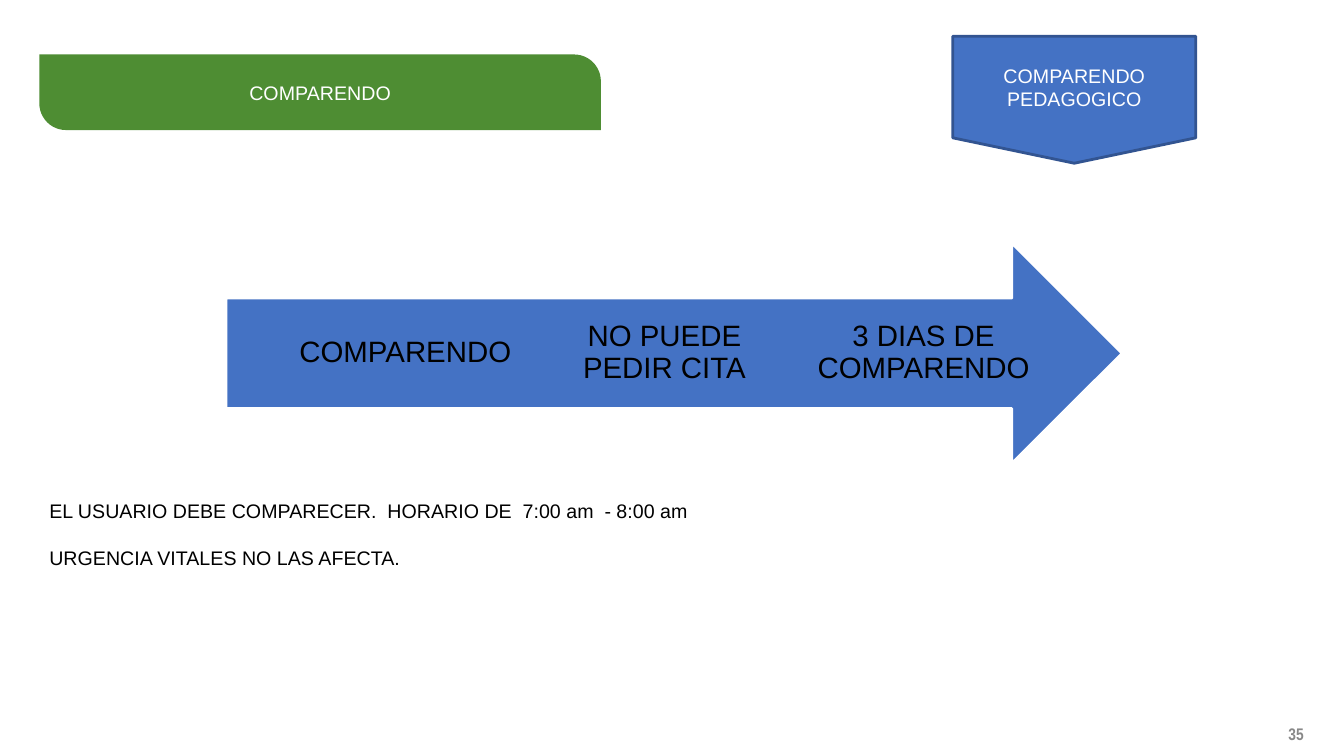
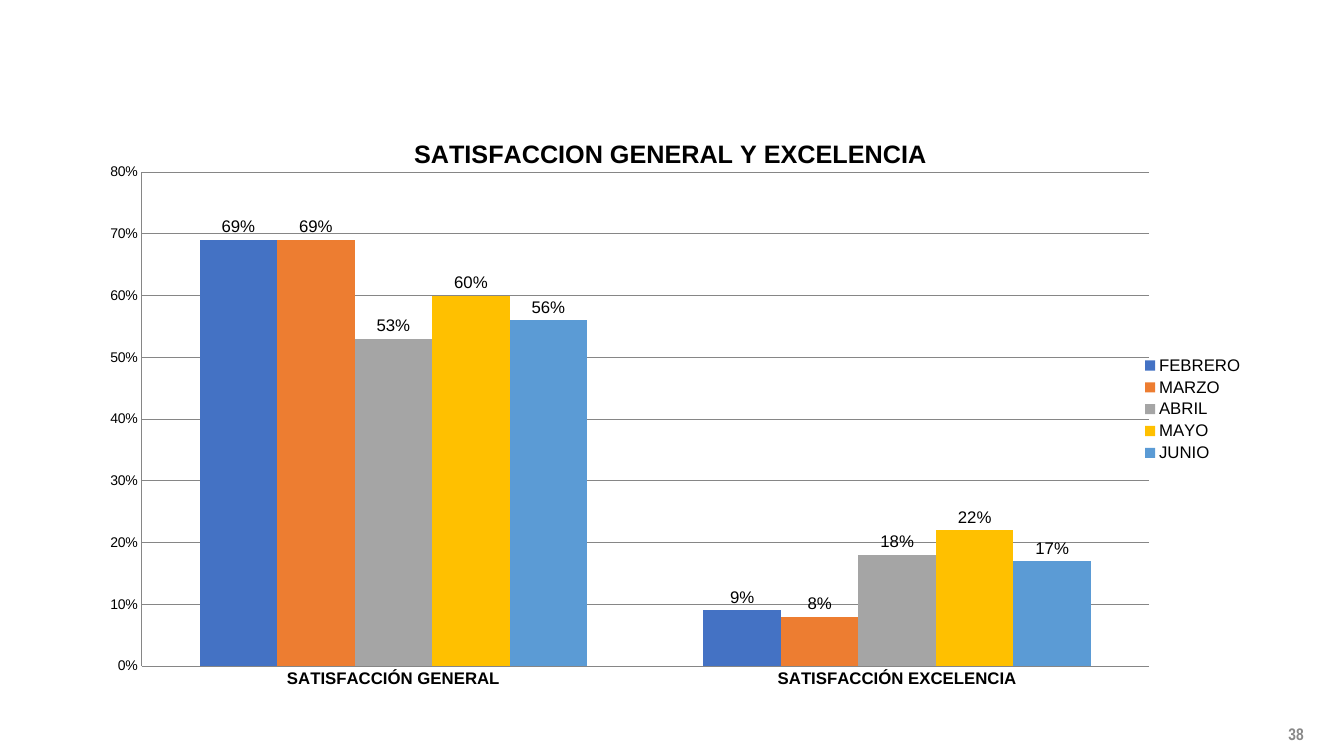
from lxml import etree
from pptx import Presentation
from pptx.chart.data import CategoryChartData
from pptx.dml.color import RGBColor
from pptx.enum.chart import XL_CHART_TYPE, XL_LABEL_POSITION, XL_LEGEND_POSITION, XL_TICK_MARK
from pptx.enum.shapes import MSO_SHAPE
from pptx.enum.text import MSO_ANCHOR, PP_ALIGN
from pptx.oxml.ns import qn
from pptx.util import Inches, Pt

COLUMNS = XL_CHART_TYPE.COLUMN_CLUSTERED
LABELS_ABOVE = XL_LABEL_POSITION.OUTSIDE_END
LEGEND_RIGHT = XL_LEGEND_POSITION.RIGHT
NO_TICKS = XL_TICK_MARK.NONE
BAND = MSO_SHAPE.ROUND_2_DIAG_RECTANGLE
PENTAGON = MSO_SHAPE.FLOWCHART_OFFPAGE_CONNECTOR
ARROW = MSO_SHAPE.RIGHT_ARROW
MIDDLE, TOP = MSO_ANCHOR.MIDDLE, MSO_ANCHOR.TOP
CENTER, LEFT = PP_ALIGN.CENTER, PP_ALIGN.LEFT

# Shared look
COLORS = {
    name: RGBColor.from_string(value)
    for name, value in {
        "blue": "4472C4", "navy": "325491", "green": "4E8D33", "orange": "ED7D31",
        "silver": "A5A5A5", "gold": "FFC000", "sky": "5B9BD5", "grid": "868686",
        "number": "888888", "black": "000000", "white": "FFFFFF",
    }.items()
}
FONT, NUMBER_FONT = "Arial", "Arial Narrow"
TITLE_ONLY, BLANK = 5, 6


def write(box, lines, size, color, align=CENTER, anchor=MIDDLE, font=FONT,
          bold=False, spacing=1.0, gap=0):
    frame = box.text_frame
    frame.word_wrap = True
    frame.vertical_anchor = anchor
    for index, line in enumerate(lines):
        para = frame.add_paragraph() if index else frame.paragraphs[0]
        para.alignment = align
        para.line_spacing = spacing
        para.space_before = Pt(gap if index else 0)
        span = para.add_run()
        span.text = line
        span.font.name = font
        span.font.size = Pt(size)
        span.font.bold = bold
        span.font.color.rgb = COLORS[color]
    return frame


def add_block(page, kind, place, fill, line=None):
    block = page.shapes.add_shape(kind, *map(Inches, place))
    block.shadow.inherit = False
    block.fill.solid()
    block.fill.fore_color.rgb = COLORS[fill]
    if line:
        block.line.color.rgb = COLORS[line]
        block.line.width = Pt(2)
    else:
        block.line.fill.background()
    return block


deck = Presentation()
deck.slide_width, deck.slide_height = Inches(13.33), Inches(7.5)
process_page = deck.slides.add_slide(deck.slide_layouts[TITLE_ONLY])
chart_page = deck.slides.add_slide(deck.slide_layouts[BLANK])

# Page numbers
for page, number in ((process_page, "35"), (chart_page, "38")):
    number_box = page.shapes.add_textbox(*map(Inches, (12.47, 7.08, 0.77, 0.4)))
    write(number_box, [number], 12, "number", font=NUMBER_FONT, bold=True)

# Slide 1: title on its green band
band_place = (0.39, 0.54, 5.57, 0.75)
band = add_block(process_page, BAND, band_place, "green")
band.adjustments[0], band.adjustments[1] = 0, 0.354
title = process_page.shapes.title
title.left, title.top, title.width, title.height = map(Inches, band_place)
write(title, ["COMPARENDO"], 14, "white")
# Bring the title in front of the band
band.element.addnext(title.element)

# Slide 1: pentagon tag
tag = add_block(process_page, PENTAGON, (9.45, 0.36, 2.41, 1.26), "blue", "navy")
write(tag, ["COMPARENDO PEDAGOGICO"], 14, "white")

# Slide 1: arrow with its steps
add_block(process_page, ARROW, (2.24, 2.41, 8.89, 2.19), "blue", "white")
steps = ["COMPARENDO", "NO PUEDE PEDIR CITA", "3 DIAS DE COMPARENDO"]
for index, step in enumerate(steps):
    step_place = (2.95 + 2.57 * index, 2.96, 2.14, 1.09)
    step_box = process_page.shapes.add_textbox(*map(Inches, step_place))
    frame = write(step_box, [step], 21, "black", spacing=0.9)
    frame.margin_left = frame.margin_right = 0
    frame.margin_top = frame.margin_bottom = Inches(0.23)

# Slide 1: remarks
remarks = [
    "EL USUARIO DEBE COMPARECER.  HORARIO DE  7:00 am  - 8:00 am",
    "URGENCIA VITALES NO LAS AFECTA.",
]
remark_box = process_page.shapes.add_textbox(*map(Inches, (0.39, 4.9, 8.31, 1.75)))
write(remark_box, remarks, 14, "black", LEFT, TOP, gap=17)

# Slide 2: chart data
months = [
    ("FEBRERO", (0.69, 0.09), "blue"),
    ("MARZO", (0.69, 0.08), "orange"),
    ("ABRIL", (0.53, 0.18), "silver"),
    ("MAYO", (0.6, 0.22), "gold"),
    ("JUNIO", (0.56, 0.17), "sky"),
]
data = CategoryChartData(number_format="0%")
data.categories = ["SATISFACCIÓN GENERAL", "SATISFACCIÓN EXCELENCIA"]
for month, values, _ in months:
    data.add_series(month, values)
chart_place = map(Inches, (0.86, 1.15, 11.58, 5.82))
chart = chart_page.shapes.add_chart(COLUMNS, *chart_place, data).chart
chart.font.name = FONT
chart.font.size = Pt(10)
chart.font.color.rgb = COLORS["black"]

# Slide 2: chart title and legend
write(chart.chart_title, ["SATISFACCION GENERAL Y EXCELENCIA"], 18, "black", bold=True)
chart.chart_title.include_in_layout = False
chart.has_legend = True
chart.legend.position = LEGEND_RIGHT
chart.legend.include_in_layout = False
chart.legend.font.size = Pt(12)

# Slide 2: columns
plot = chart.plots[0]
plot.gap_width, plot.overlap = 150, 0
plot.vary_by_categories = False
for series, (_, _, color) in zip(plot.series, months):
    series.format.fill.solid()
    series.format.fill.fore_color.rgb = COLORS[color]
    labels = series.data_labels
    labels.show_value = True
    labels.number_format, labels.number_format_is_linked = "0%", False
    labels.position = LABELS_ABOVE
    labels.font.size = Pt(12)

# Slide 2: axes
percent_axis, category_axis = chart.value_axis, chart.category_axis
percent_axis.minimum_scale, percent_axis.maximum_scale = 0, 0.8
percent_axis.major_unit = 0.1
percent_axis.tick_labels.number_format = "0%"
percent_axis.tick_labels.number_format_is_linked = False
category_axis.tick_labels.font.size = Pt(12)
category_axis.tick_labels.font.bold = True
for axis in (percent_axis, category_axis):
    axis.major_tick_mark = axis.minor_tick_mark = NO_TICKS
    axis.format.line.color.rgb = COLORS["grid"]
percent_axis.has_major_gridlines = True
percent_axis.major_gridlines.format.line.color.rgb = COLORS["grid"]

# Slide 2: fixed place of the plot inside the chart
plot_area = chart.element.find(".//" + qn("c:plotArea"))
layout = plot_area.find(qn("c:layout"))
if layout is None:
    layout = etree.Element(qn("c:layout"))
    plot_area.insert(0, layout)
manual = etree.SubElement(layout, qn("c:manualLayout"))
for tag_name, value in (
    ("layoutTarget", "inner"), ("xMode", "edge"), ("yMode", "edge"),
    ("x", "0.047"), ("y", "0.096"), ("w", "0.863"), ("h", "0.842"),
):
    etree.SubElement(manual, qn("c:" + tag_name)).set("val", value)

deck.save("out.pptx")
